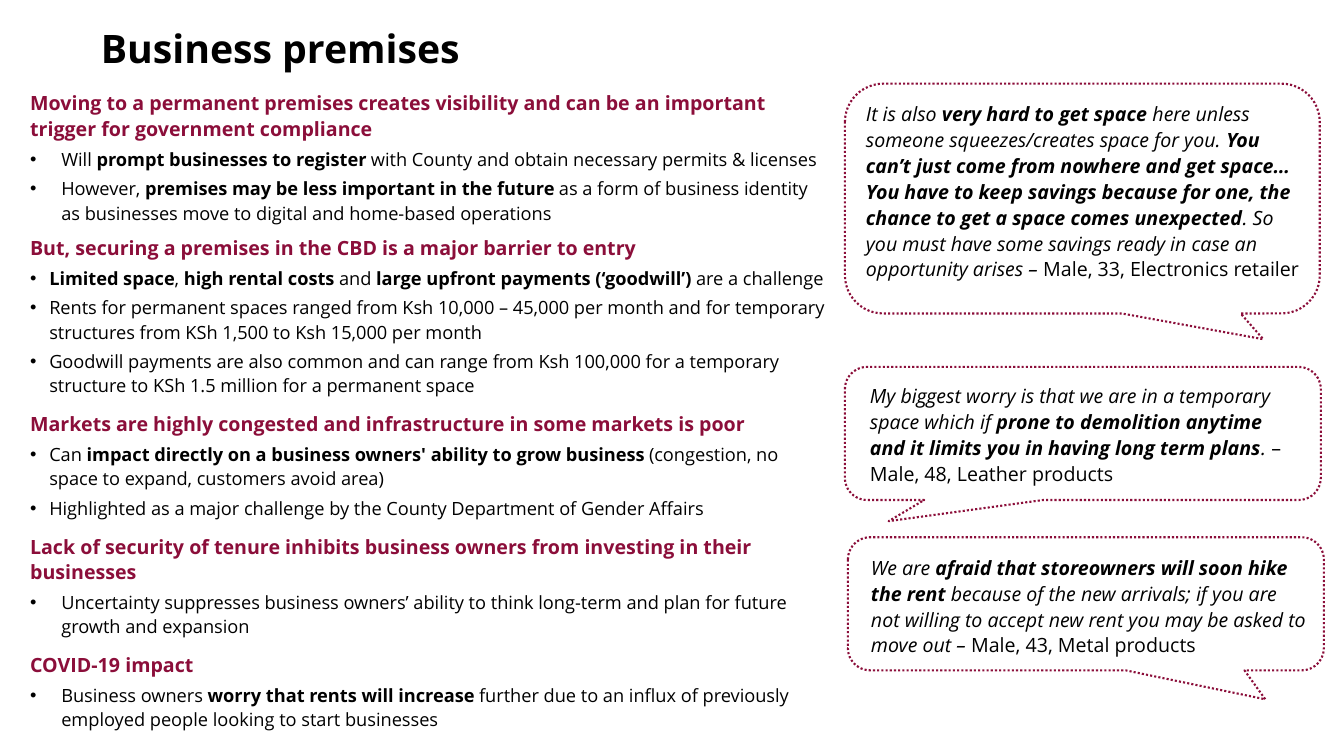
from lxml import etree
from pptx import Presentation
from pptx.dml.color import RGBColor
from pptx.enum.dml import MSO_LINE
from pptx.enum.shapes import MSO_SHAPE
from pptx.enum.text import MSO_ANCHOR, MSO_AUTO_SIZE, PP_ALIGN
from pptx.oxml.ns import qn
from pptx.util import Inches, Pt

CALLOUT = MSO_SHAPE.ROUNDED_RECTANGULAR_CALLOUT
DOTTED = MSO_LINE.ROUND_DOT
MIDDLE = MSO_ANCHOR.MIDDLE
NO_FIT = MSO_AUTO_SIZE.NONE
LEFT = PP_ALIGN.LEFT

FONT = "Open Sans"
COLORS = {"heading": "8B0E3A", "text": "000000"}


def add_runs(p, text, color="text", **formats):
    """Add text to a paragraph, with the parts between ** in bold."""
    for i, part in enumerate(text.split("**")):
        if part:
            r = p.add_run()
            r.text = part
            r.font.color.rgb = RGBColor.from_string(COLORS[color])
            for name, value in {"name": FONT, "bold": i % 2 == 1, **formats}.items():
                setattr(r.font, name, value)


def add_textbox(s, left, top, width, height):
    tf = s.shapes.add_textbox(Inches(left), Inches(top), Inches(width), Inches(height)).text_frame
    tf.word_wrap = True
    return tf


prs = Presentation()
prs.slide_width, prs.slide_height = Inches(13.33), Inches(7.5)
s = prs.slides.add_slide(prs.slide_layouts[5])

# Title
title = s.shapes.title
title.left, title.top, title.width, title.height = [Inches(v) for v in (0.9, 0.23, 10.71, 0.54)]
tf = title.text_frame
tf.auto_size = NO_FIT
tf.vertical_anchor = MIDDLE
p = tf.paragraphs[0]
p.alignment = LEFT
p.line_spacing = 0.9
add_runs(p, "**Business premises**", size=Pt(28))

# Findings: heading, space before it in points, bullet indent in inches, bullets
sections = [
    ("Moving to a permanent premises creates visibility and can be an important trigger "
     "for government compliance", 0, 0.31, [
        "Will **prompt businesses to register** with County and obtain necessary permits & licenses",
        "However, **premises may be less important in the future **as a form of business identity "
        "as businesses move to digital and home-based operations"]),
    ("But, securing a premises in the CBD is a major barrier to entry", 3, 0.19, [
        "**Limited space**, **high rental costs **and **large upfront payments (‘goodwill’)** "
        "are a challenge",
        "Rents for permanent spaces ranged from Ksh 10,000 – 45,000 per month and for temporary "
        "structures from KSh 1,500 to Ksh 15,000 per month",
        "Goodwill payments are also common and can range from Ksh 100,000 for a temporary "
        "structure to KSh 1.5 million for a permanent space"]),
    ("Markets are highly congested and infrastructure in some markets is poor", 5.5, 0.19, [
        "Can **impact directly on a business owners' ability to grow business **(congestion, no "
        "space to expand, customers avoid area)",
        "Highlighted as a major challenge by the County Department of Gender Affairs"]),
    ("Lack of security of tenure inhibits business owners from investing in their businesses",
     5.5, 0.31, [
        "Uncertainty suppresses business owners’ ability to think long-term and plan for future "
        "growth and expansion"]),
    ("COVID-19 impact", 5.5, 0.31, [
        "Business owners **worry that rents will increase** further due to an influx of "
        "previously employed people looking to start businesses"]),
]
tf = add_textbox(s, 0.2, 0.83, 8.11, 6.24)
p = tf.paragraphs[0]
for heading, space_before, indent, bullets in sections:
    if space_before:
        p = tf.add_paragraph()
        p.space_before = Pt(space_before)
    p.line_spacing = 1.1
    p.space_after = Pt(4)
    add_runs(p, f"**{heading}**", "heading", size=Pt(14))
    for bullet in bullets:
        p = tf.add_paragraph()
        pPr = p._p.get_or_add_pPr()
        pPr.set("marL", str(Inches(indent)))
        pPr.set("indent", str(-Inches(indent)))
        etree.SubElement(pPr, qn("a:buFont")).set("typeface", "Arial")
        etree.SubElement(pPr, qn("a:buChar")).set("char", "•")
        p.line_spacing = 1.1
        p.space_after = Pt(4)
        add_runs(p, bullet, size=Pt(13))

# Quotes: bubble place, pointer tip, text place, quote, speaker
quotes = [
    ((8.38, 0.83, 4.71, 2.28), (0.381, 0.612), (8.49, 0.94, 4.55, 2.16),
     "It is also **very hard to get space **here unless someone squeezes/creates space for you. "
     "**You can’t just come from nowhere and get space… You have to keep savings because for one, "
     "the chance to get a space comes unexpected**. So you must have some savings ready in case "
     "an opportunity arises – ", "Male, 33, Electronics retailer"),
    ((8.38, 3.64, 4.72, 1.32), (-0.408, 0.659), (8.53, 3.74, 4.48, 1.12),
     "My biggest worry is that we are in a temporary space which if **prone to demolition anytime "
     "and it limits you in having long term plans**. ", "– Male, 48, Leather products"),
    ((8.41, 5.33, 4.72, 1.32), (0.377, 0.718), (8.54, 5.44, 4.55, 1.12),
     "We are **afraid that storeowners will soon hike the rent **because of the new arrivals; "
     "if you are not willing to accept new rent you may be asked to move out – ",
     "Male, 43, Metal products"),
]
for bubble_place, tip, text_place, quote, speaker in quotes:
    bubble = s.shapes.add_shape(CALLOUT, *[Inches(v) for v in bubble_place])
    bubble.adjustments[0], bubble.adjustments[1] = tip
    bubble.shadow.inherit = False
    bubble.fill.background()
    bubble.line.color.rgb = RGBColor.from_string(COLORS["heading"])
    bubble.line.width = Pt(1.5)
    bubble.line.dash_style = DOTTED
    p = add_textbox(s, *text_place).paragraphs[0]
    p.line_spacing = 1.1
    add_runs(p, quote, size=Pt(14), italic=True)
    add_runs(p, speaker, size=Pt(14))

prs.save("out.pptx")
